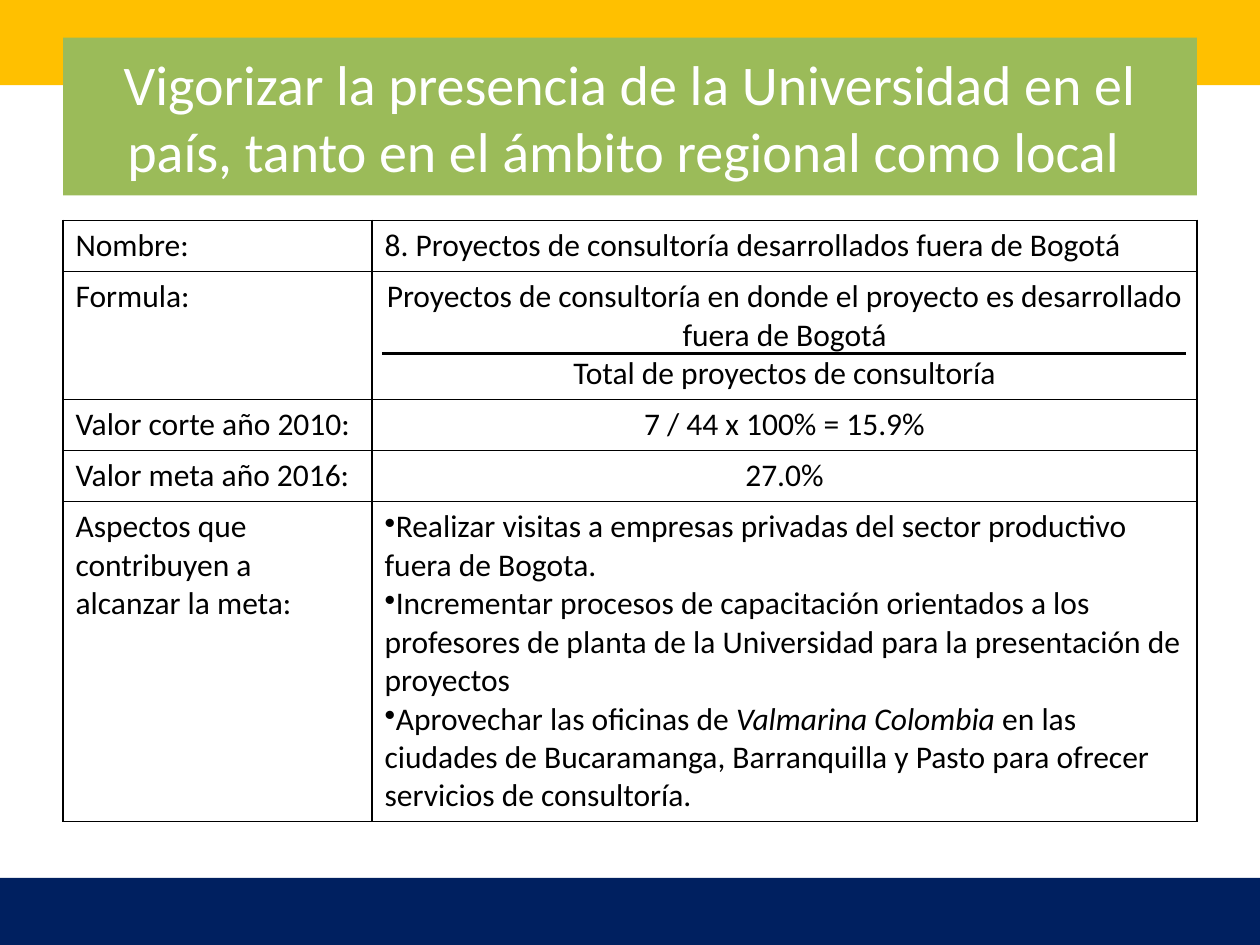
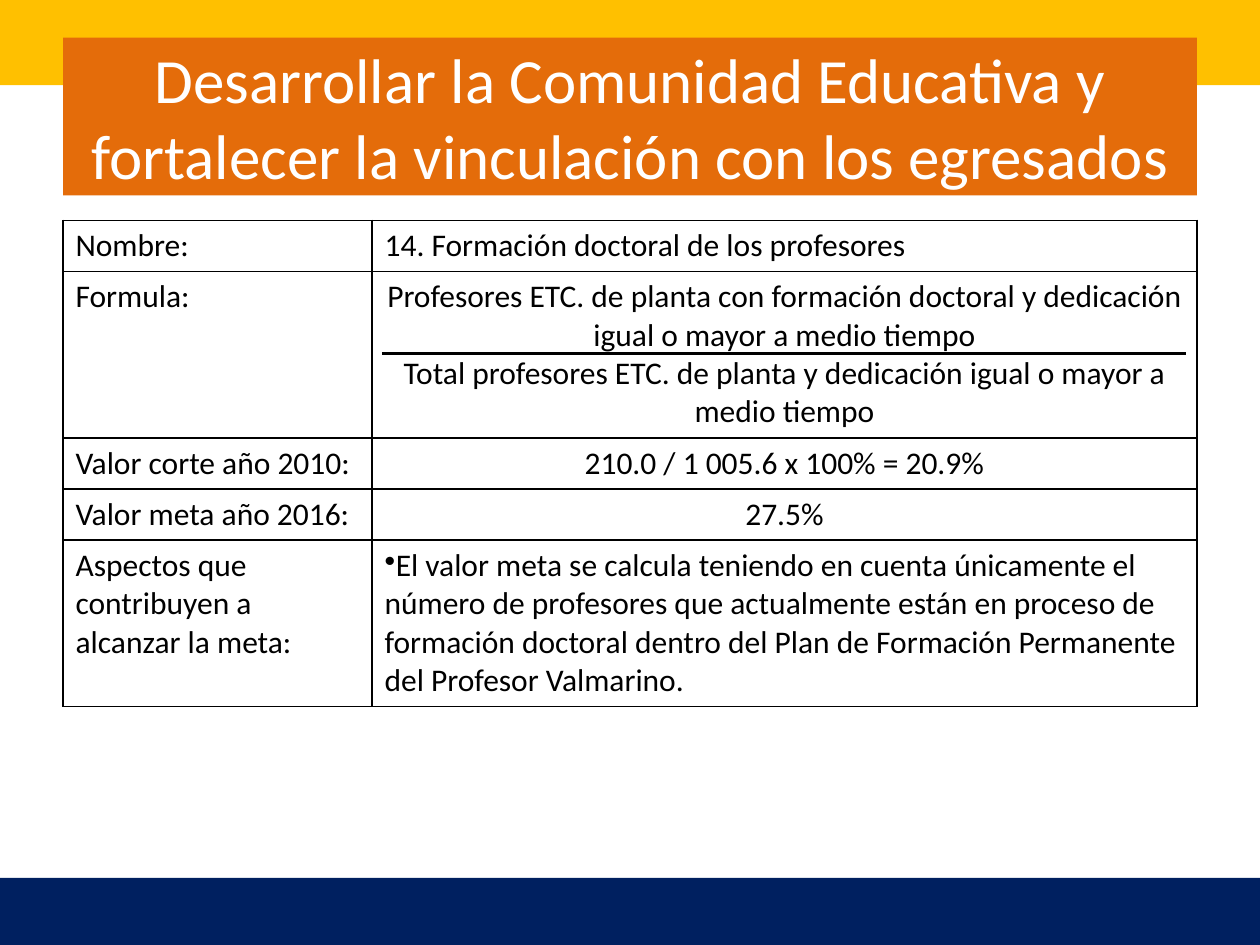
from lxml.etree import SubElement
from pptx import Presentation
from pptx.dml.color import RGBColor
from pptx.enum.shapes import MSO_CONNECTOR, MSO_SHAPE
from pptx.enum.text import MSO_ANCHOR, MSO_AUTO_SIZE, PP_ALIGN
from pptx.oxml import parse_xml
from pptx.oxml.ns import nsdecls, qn
from pptx.util import Cm, Pt

GOLD = RGBColor(0xFF, 0xC0, 0x00)
NAVY = RGBColor(0x00, 0x20, 0x60)
GREEN = RGBColor(0x9B, 0xBB, 0x59)
ORANGE = RGBColor(0xE4, 0x6C, 0x0A)
WHITE = RGBColor(0xFF, 0xFF, 0xFF)
BLACK = RGBColor(0x00, 0x00, 0x00)
FONT = "Calibri"

# Content: labels are shared; each aspect is a list of (text, italic) runs
LABELS = ["Nombre:", "Formula:", "Valor corte año 2010:", "Valor meta año 2016:",
          "Aspectos que contribuyen a alcanzar la meta:"]
INDICATORS = [
    dict(
        goal="Vigorizar la presencia de la Universidad en el país, "
             "tanto en el ámbito regional como local ",
        goal_size=32, color=GREEN,
        name="8. Proyectos de consultoría desarrollados fuera de Bogotá",
        formula=["Proyectos de consultoría en donde el proyecto es desarrollado fuera de Bogotá",
                 "Total de proyectos de consultoría"],
        current="7 / 44 x 100% = 15.9%",
        target="27.0%",
        aspects=[
            [("Realizar visitas a empresas privadas del sector productivo fuera de Bogota.", False)],
            [("Incrementar procesos de capacitación orientados a los profesores de planta "
              "de la Universidad para la presentación de proyectos", False)],
            [("Aprovechar las oficinas de ", False), ("Valmarina Colombia", True),
             (" en las ciudades de Bucaramanga, Barranquilla y Pasto para ofrecer "
              "servicios de consultoría.", False)],
        ],
    ),
    dict(
        goal="Desarrollar la Comunidad Educativa y fortalecer la vinculación con los egresados",
        goal_size=36, color=ORANGE,
        name="14. Formación doctoral de los profesores",
        formula=["Profesores ETC. de planta con formación doctoral y dedicación "
                 "igual o mayor a medio tiempo",
                 "Total profesores ETC. de planta y dedicación igual o mayor a medio tiempo"],
        current="210.0 / 1 005.6 x 100% = 20.9%",
        target="27.5%",
        aspects=[
            [("El valor meta se calcula teniendo en cuenta únicamente el número de profesores "
              "que actualmente están en proceso de formación doctoral dentro del Plan de "
              "Formación Permanente del Profesor Valmarino.", False)],
        ],
    ),
]

# Layout
SLIDE_W, SLIDE_H = Cm(25.4), Cm(19.05)
LEFT, WIDTH = Cm(1.27), Cm(22.86)
TITLE_TOP, TITLE_H = Cm(0.76), Cm(3.18)
TABLE_TOP, ROW_H = Cm(4.44), Cm(1.03)
LABEL_W = Cm(6.23)
FRACTION_LEFT, FRACTION_RIGHT, FRACTION_Y = Cm(7.7), Cm(23.9), Cm(7.13)
BANDS = [  # left, top, width, height, colour
    (Cm(0), Cm(-0.08), SLIDE_W, Cm(1.8), GOLD),
    (Cm(-0.08), Cm(17.7), Cm(25.48), Cm(1.5), NAVY),
]


def add_bands(slide, master):
    """Draw the bands and move them to the master, behind everything else."""
    for number, (left, top, width, height, color) in enumerate(BANDS):
        band = slide.shapes.add_shape(MSO_SHAPE.RECTANGLE, left, top, width, height)
        band.shadow.inherit = False
        band.fill.solid()
        band.fill.fore_color.rgb = color
        band.line.fill.background()
        band.element.nvSpPr.cNvPr.set("id", str(101 + number))
        master.shapes.element.insert(2 + number, band.element)


def add_title(slide, text, size, color):
    title = slide.shapes.title
    title.left, title.top, title.width, title.height = LEFT, TITLE_TOP, WIDTH, TITLE_H
    title.fill.solid()
    title.fill.fore_color.rgb = color
    frame = title.text_frame
    frame.text = text
    frame.word_wrap = True
    frame.auto_size = MSO_AUTO_SIZE.NONE
    frame.vertical_anchor = MSO_ANCHOR.MIDDLE
    style(frame.paragraphs[0], size, WHITE, PP_ALIGN.CENTER)


def style(paragraph, size, color, align):
    paragraph.alignment = align
    paragraph.font.name = FONT
    paragraph.font.size = Pt(size)
    paragraph.font.color.rgb = color


def add_borders(cell):
    properties = cell._tc.get_or_add_tcPr()
    for position, side in enumerate(("lnL", "lnR", "lnT", "lnB")):
        properties.insert(position, parse_xml(
            f'<a:{side} {nsdecls("a")} w="{Pt(1)}"><a:solidFill>'
            f'<a:srgbClr val="{BLACK}"/></a:solidFill></a:{side}>'))


def fill_cell(cell, paragraphs, align=PP_ALIGN.LEFT, bulleted=False):
    """Write paragraphs, each a list of (text, italic) runs."""
    frame = cell.text_frame
    for index, runs in enumerate(paragraphs):
        paragraph = frame.add_paragraph() if index else frame.paragraphs[0]
        style(paragraph, 18, BLACK, align)
        for text, italic in runs:
            run = paragraph.add_run()
            run.text = text
            if italic:
                run.font.italic = True
        if bulleted:
            properties = paragraph._p.get_or_add_pPr()
            bullet = SubElement(properties, qn("a:buChar"))
            bullet.set("char", "•")
            properties.insert(0, bullet)
    cell.fill.background()
    add_borders(cell)


def plain(*texts):
    return [[(text, False)] for text in texts]


def add_indicator_table(slide, indicator):
    table = slide.shapes.add_table(len(LABELS), 2, LEFT, TABLE_TOP,
                                   WIDTH, ROW_H * len(LABELS)).table
    table.first_row = table.horz_banding = False
    table.columns[0].width = LABEL_W
    table.columns[1].width = WIDTH - LABEL_W
    values = [
        (plain(indicator["name"]), PP_ALIGN.LEFT, False),
        (plain(*indicator["formula"]), PP_ALIGN.CENTER, False),
        (plain(indicator["current"]), PP_ALIGN.CENTER, False),
        (plain(indicator["target"]), PP_ALIGN.CENTER, False),
        (indicator["aspects"], PP_ALIGN.LEFT, True),
    ]
    for row, (label, value) in enumerate(zip(LABELS, values)):
        fill_cell(table.cell(row, 0), plain(label))
        fill_cell(table.cell(row, 1), *value)


def add_fraction_bar(slide):
    bar = slide.shapes.add_connector(MSO_CONNECTOR.STRAIGHT, FRACTION_LEFT, FRACTION_Y,
                                     FRACTION_RIGHT, FRACTION_Y)
    bar.line.color.rgb = BLACK
    bar.line.width = Pt(2)
    SubElement(bar.element.spPr, qn("a:effectLst"))


def main():
    deck = Presentation()
    deck.slide_width, deck.slide_height = SLIDE_W, SLIDE_H
    title_only = deck.slide_layouts[5]
    for indicator in INDICATORS:
        slide = deck.slides.add_slide(title_only)
        add_title(slide, indicator["goal"], indicator["goal_size"], indicator["color"])
        add_indicator_table(slide, indicator)
        add_fraction_bar(slide)
    add_bands(deck.slides[0], deck.slide_master)
    deck.save("out.pptx")


if __name__ == "__main__":
    main()
